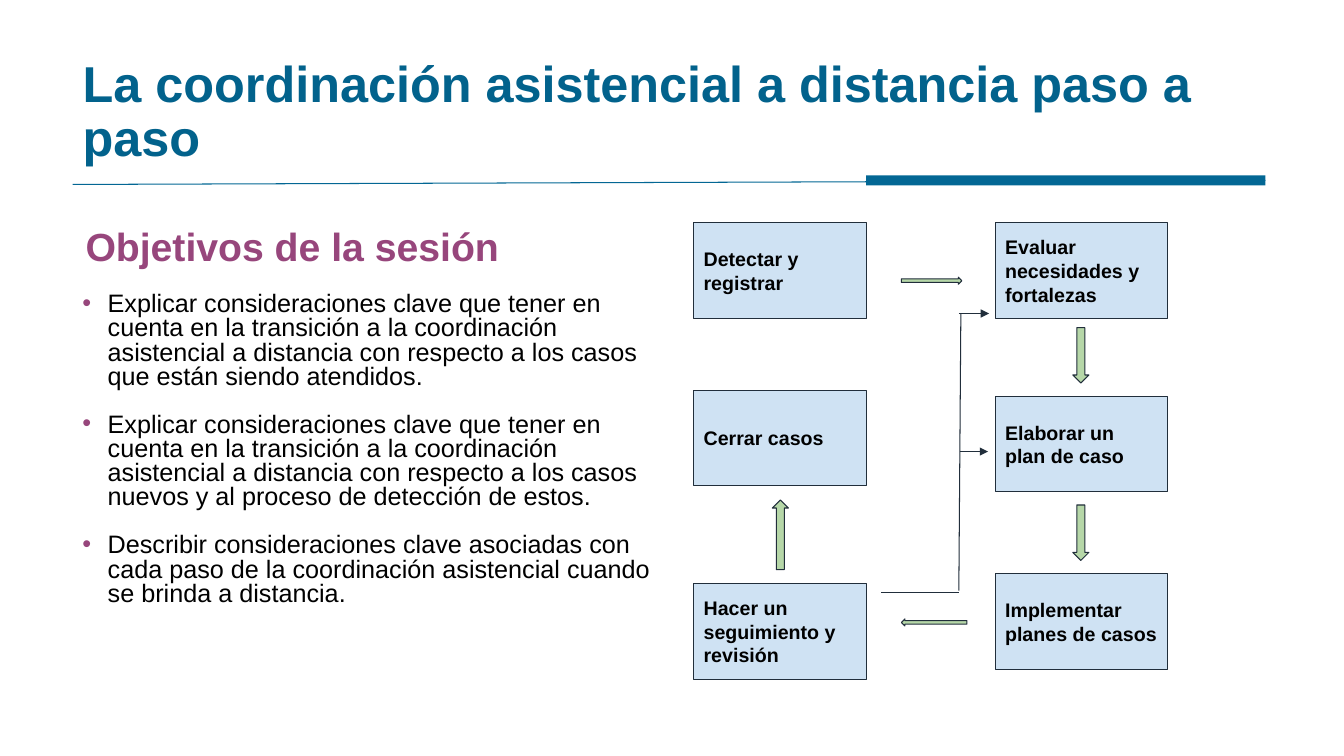
from lxml.etree import SubElement
from pptx import Presentation
from pptx.dml.color import RGBColor
from pptx.enum.shapes import MSO_CONNECTOR as CONNECTOR, MSO_SHAPE as SHAPE
from pptx.enum.text import MSO_ANCHOR as ANCHOR, PP_ALIGN as ALIGN
from pptx.oxml.ns import qn
from pptx.util import Inches, Pt

TEAL = RGBColor(0x03, 0x67, 0x94)
TITLE_TEAL = RGBColor(0x02, 0x62, 0x8C)
PLUM = RGBColor(0x97, 0x46, 0x7C)
BLACK = RGBColor(0, 0, 0)
STEP_BLUE = RGBColor(0xCF, 0xE2, 0xF3)
ARROW_GREEN = RGBColor(0xB6, 0xD7, 0xA8)
OUTLINE = RGBColor(0x21, 0x2E, 0x3B)

TITLE = "La coordinación asistencial a distancia paso a paso"
HEADING = "Objetivos de la sesión"
OBJECTIVES = [
    "Explicar consideraciones clave que tener en cuenta en la transición a la coordinación "
    "asistencial a distancia con respecto a los casos que están siendo atendidos.",
    "Explicar consideraciones clave que tener en cuenta en la transición a la coordinación "
    "asistencial a distancia con respecto a los casos nuevos y al proceso de detección de estos.",
    "Describir consideraciones clave asociadas con cada paso de la coordinación asistencial "
    "cuando se brinda a distancia.",
]

LEFT_COLUMN, RIGHT_COLUMN = 6.88, 9.87
STEP_SIZE = (1.71, 0.95)
STEPS = [
    ("Detectar y registrar", LEFT_COLUMN, 2.21),
    ("Evaluar necesidades y fortalezas", RIGHT_COLUMN, 2.21),
    ("Cerrar casos", LEFT_COLUMN, 3.87),
    ("Elaborar un plan de caso", RIGHT_COLUMN, 3.93),
    ("Hacer un seguimiento y revisión", LEFT_COLUMN, 5.79),
    ("Implementar planes de casos", RIGHT_COLUMN, 5.69),
]
FLOW_ARROWS = [
    (SHAPE.RIGHT_ARROW, (8.94, 2.75, 0.6, 0.07)),
    (SHAPE.DOWN_ARROW, (10.64, 3.25, 0.16, 0.55)),
    (SHAPE.DOWN_ARROW, (10.64, 5.01, 0.16, 0.55)),
    (SHAPE.LEFT_ARROW, (8.94, 6.14, 0.65, 0.07)),
    (SHAPE.UP_ARROW, (7.66, 4.96, 0.16, 0.69)),
]
FEEDBACK_LINES = [
    ((8.74, 5.88, 9.51, 5.88), False),
    ((9.51, 5.86, 9.53, 3.11), False),
    ((9.51, 3.11, 9.81, 3.11), True),
    ((9.52, 4.48, 9.8, 4.48), True),
]


def inches(values):
    """Convert plain numbers to lengths."""
    return [Inches(value) for value in values]


def apply_format(target, settings):
    """Set every attribute named in the settings."""
    for name, value in settings.items():
        setattr(target, name, value)


def write_text(paragraph, text, size, color, bold=True, **settings):
    """Fill a paragraph with one formatted run."""
    apply_format(paragraph, {"alignment": ALIGN.LEFT, **settings})
    run = paragraph.add_run()
    run.text = text
    apply_format(run.font, {"name": "Arial", "size": Pt(size), "bold": bold})
    run.font.color.rgb = color


def add_bullet(paragraph):
    """Give a paragraph a hanging plum bullet."""
    properties = paragraph._p.get_or_add_pPr()
    properties.set("marL", str(Inches(0.25)))
    properties.set("indent", str(-Inches(0.25)))
    bullet_color = SubElement(properties, qn("a:buClr"))
    SubElement(bullet_color, qn("a:srgbClr"), val=str(PLUM))
    SubElement(properties, qn("a:buFont"), typeface="Arial")
    SubElement(properties, qn("a:buChar"), char="•")


def add_title(slide):
    """Place and format the slide title."""
    title = slide.shapes.title
    bounds = inches((0.72, 0.4, 11.5, 1.45))
    apply_format(title, dict(zip(("left", "top", "width", "height"), bounds)))
    apply_format(title.text_frame, {"word_wrap": True, "vertical_anchor": ANCHOR.MIDDLE})
    write_text(title.text_frame.paragraphs[0], TITLE, 36, TITLE_TEAL, line_spacing=0.9)


def add_text_frame(slide, bounds):
    """Add a wrapping text box and return its frame."""
    frame = slide.shapes.add_textbox(*inches(bounds)).text_frame
    frame.word_wrap = True
    return frame


def add_objectives(slide):
    """Add the bulleted session objectives."""
    frame = add_text_frame(slide, (0.72, 2.86, 5.86, 3.35))
    for index, objective in enumerate(OBJECTIVES):
        paragraph = frame.add_paragraph() if index else frame.paragraphs[0]
        write_text(paragraph, objective, 18, BLACK, bold=False,
                   line_spacing=0.8, space_before=Pt(17 if index else 0))
        add_bullet(paragraph)


def add_block(slide, preset, bounds, fill, outline=None):
    """Add a flat filled shape, outlined if a colour is given."""
    block = slide.shapes.add_shape(preset, *inches(bounds))
    block.shadow.inherit = False
    block.fill.solid()
    block.fill.fore_color.rgb = fill
    if outline is None:
        block.line.fill.background()
    else:
        block.line.color.rgb = outline
        block.line.width = Pt(0.75)
    return block


def add_step(slide, label, left, top):
    """Add one labelled step of the process."""
    step = add_block(slide, SHAPE.RECTANGLE, (left, top, *STEP_SIZE), STEP_BLUE, OUTLINE)
    margins = dict.fromkeys(
        ("margin_left", "margin_top", "margin_right", "margin_bottom"), Inches(0.1))
    apply_format(step.text_frame,
                 {"word_wrap": True, "vertical_anchor": ANCHOR.MIDDLE, **margins})
    write_text(step.text_frame.paragraphs[0], label, 14, BLACK)


def add_line(slide, ends, color, arrow=False):
    """Add a thin straight line, with an arrowhead if asked."""
    line = slide.shapes.add_connector(CONNECTOR.STRAIGHT, *inches(ends))
    line.line.color.rgb = color
    line.line.width = Pt(0.75)
    if arrow:
        SubElement(line.line._get_or_add_ln(), qn("a:tailEnd"), type="triangle")
    SubElement(line._element.spPr, qn("a:effectLst"))


def main():
    """Build and save the slide."""
    deck = Presentation()
    apply_format(deck, {"slide_width": Inches(13.33), "slide_height": Inches(7.5)})
    slide = deck.slides.add_slide(deck.slide_layouts.get_by_name("Title Only"))
    add_line(slide, (0.72, 1.83, 12.55, 1.79), TEAL)
    add_block(slide, SHAPE.RECTANGLE, (8.59, 1.74, 3.96, 0.1), TEAL)
    add_title(slide)
    heading = add_text_frame(slide, (0.75, 2.21, 11.83, 0.55))
    write_text(heading.paragraphs[0], HEADING, 28, PLUM, line_spacing=0.9)
    add_objectives(slide)
    for label, left, top in STEPS:
        add_step(slide, label, left, top)
    for preset, bounds in FLOW_ARROWS:
        add_block(slide, preset, bounds, ARROW_GREEN, OUTLINE)
    for ends, arrow in FEEDBACK_LINES:
        add_line(slide, ends, OUTLINE, arrow)
    deck.save("out.pptx")


if __name__ == "__main__":
    main()
